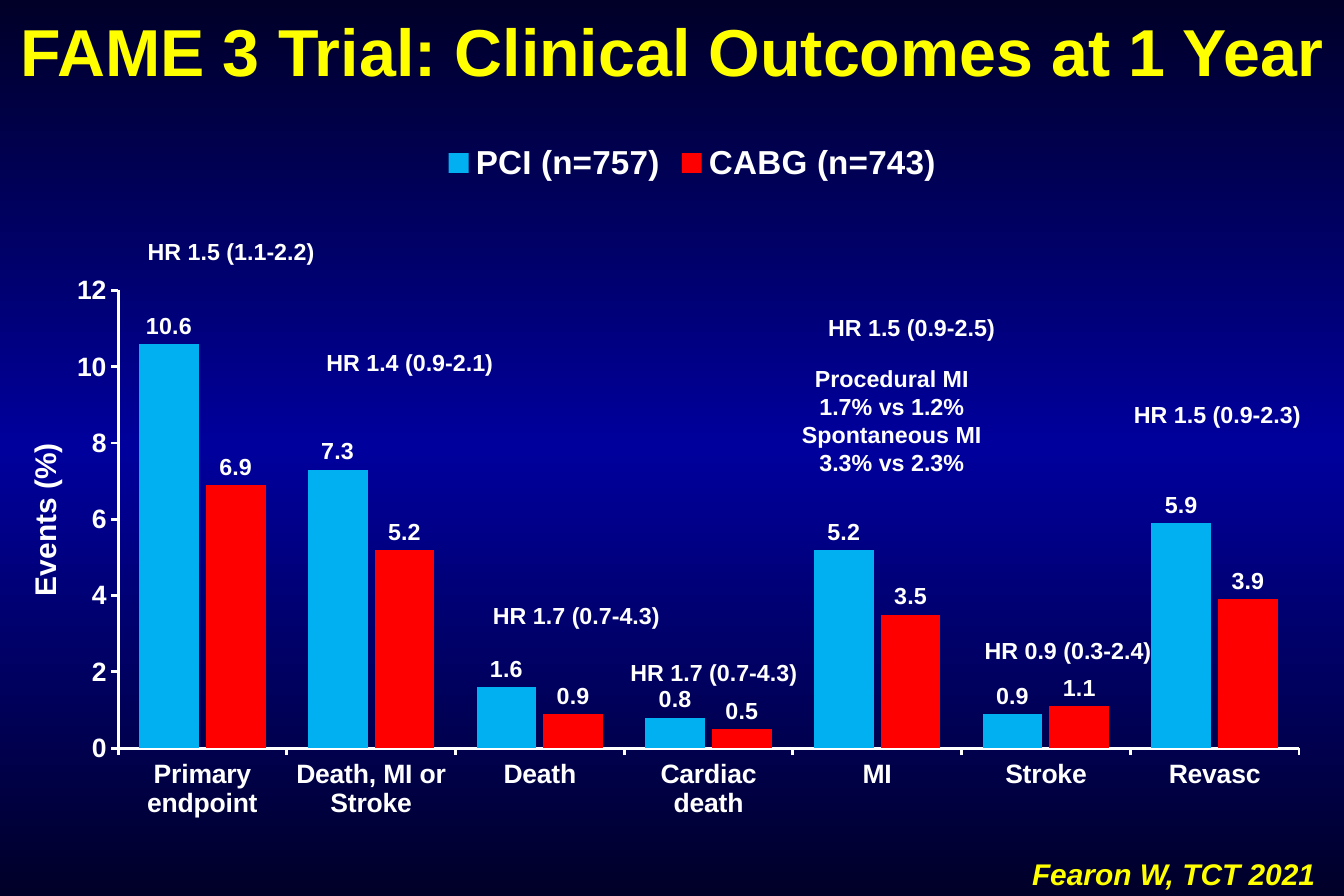
from lxml import etree
from copy import deepcopy
from pptx import Presentation
from pptx.chart.data import CategoryChartData
from pptx.dml.color import RGBColor
from pptx.enum.chart import XL_CHART_TYPE as ChartType
from pptx.enum.chart import XL_LABEL_POSITION as LabelPosition
from pptx.enum.chart import XL_LEGEND_POSITION as LegendPosition
from pptx.enum.chart import XL_TICK_MARK as TickMark
from pptx.enum.text import MSO_ANCHOR as Anchor
from pptx.enum.text import PP_ALIGN as Align
from pptx.oxml.ns import qn
from pptx.util import Inches, Pt

WHITE, YELLOW = "FFFFFF", "FFFF00"
BACKGROUND = [(0, "000028"), (0.5, "00009C"), (1, "000028")]

TITLE = "FAME 3 Trial: Clinical Outcomes at 1 Year"
CREDIT = "Fearon W, TCT 2021"
AXIS_TITLE = "Events (%)"
CATEGORIES = ["Primary endpoint", "Death, MI or Stroke", "Death",
              "Cardiac death", "MI", "Stroke", "Revasc"]
SERIES = [
    ("PCI (n=757)", "00B0F0", [10.6, 7.3, 1.6, 0.8, 5.2, 0.9, 5.9]),
    ("CABG (n=743)", "FF0000", [6.9, 5.2, 0.9, 0.5, 3.5, 1.1, 3.9]),
]
# Lines of text, then left, top, width, height
ANNOTATIONS = [
    (["HR 1.5 (1.1-2.2)"], (1.12, 1.94, 1.63, 0.34)),
    (["HR 1.4 (0.9-2.1)"], (2.54, 2.87, 1.78, 0.34)),
    (["HR 1.7 (0.7-4.3)"], (3.94, 4.98, 1.77, 0.34)),
    (["HR 1.7 (0.7-4.3)"], (5.09, 5.46, 1.77, 0.34)),
    (["HR 1.5 (0.9-2.5)"], (6.72, 2.57, 1.82, 0.34)),
    (["Procedural MI", "1.7% vs 1.2%", "Spontaneous MI", "3.3% vs 2.3%"],
     (6.39, 3, 2.15, 1.04)),
    (["HR 0.9 (0.3-2.4)"], (8.08, 5.28, 1.72, 0.34)),
    (["HR 1.5 (0.9-2.3)"], (9.36, 3.3, 1.66, 0.34)),
]
CHART_BOX = (0.57, 1.08, 10.45, 5.85)
PLOT_LAYOUT = {"layoutTarget": "inner", "xMode": "edge", "yMode": "edge",
               "x": 0.04, "y": 0.231, "w": 0.946, "h": 0.655}


def rgb(color):
    return RGBColor.from_string(color)


def set_values(target, values):
    for name, value in values.items():
        setattr(target, name, value)


def format_font(font, size, color=WHITE, italic=False):
    set_values(font, {"name": "Arial", "size": Pt(size), "bold": True, "italic": italic})
    font.color.rgb = rgb(color)


def add_text(slide, lines, box, size, color=WHITE, align=Align.CENTER, italic=False):
    shape = slide.shapes.add_textbox(*map(Inches, box))
    frame = shape.text_frame
    frame.word_wrap = True
    frame.text = "\n".join(lines)
    for paragraph in frame.paragraphs:
        paragraph.alignment = align
        format_font(paragraph.runs[0].font, size, color, italic)
    return shape


def paint_background(slide):
    fill = slide.background.fill
    fill.gradient()
    fill.gradient_angle = 90
    stop_list = slide.element.find(".//" + qn("a:gsLst"))
    stop_list.append(deepcopy(stop_list[-1]))
    for stop, (position, color) in zip(fill.gradient_stops, BACKGROUND):
        stop.position = position
        stop.color.rgb = rgb(color)


def place_plot(chart):
    """Fix the inner plot area as fractions of the chart."""
    plot_area = chart.element.find(".//" + qn("c:plotArea"))
    for layout in plot_area.findall(qn("c:layout")):
        plot_area.remove(layout)
    layout = etree.Element(qn("c:layout"))
    manual = etree.SubElement(layout, qn("c:manualLayout"))
    for name, value in PLOT_LAYOUT.items():
        etree.SubElement(manual, qn("c:" + name)).set("val", str(value))
    plot_area.insert(0, layout)


def add_outcome_chart(slide):
    data = CategoryChartData()
    data.categories = CATEGORIES
    for name, _, values in SERIES:
        data.add_series(name, values)
    chart = slide.shapes.add_chart(
        ChartType.COLUMN_CLUSTERED, *map(Inches, CHART_BOX), data).chart
    set_values(chart, {"has_title": False, "has_legend": True})
    set_values(chart.font, {"name": "Calibri", "size": Pt(10)})
    set_values(chart.legend, {"position": LegendPosition.TOP, "include_in_layout": False})
    format_font(chart.legend.font, 20)

    for axis in (chart.category_axis, chart.value_axis):
        set_values(axis, {"has_major_gridlines": False,
                          "major_tick_mark": TickMark.OUTSIDE,
                          "minor_tick_mark": TickMark.NONE})
        format_font(axis.tick_labels.font, 16)
        axis.format.line.color.rgb = rgb(WHITE)
        axis.format.line.width = Pt(1.75)
    set_values(chart.value_axis, {"minimum_scale": 0, "maximum_scale": 12, "major_unit": 2})

    plot = chart.plots[0]
    set_values(plot, {"gap_width": 71, "overlap": -12, "vary_by_categories": False})
    for series, (_, color, _) in zip(plot.series, SERIES):
        series.format.fill.solid()
        series.format.fill.fore_color.rgb = rgb(color)
        labels = series.data_labels
        set_values(labels, {"show_value": True, "position": LabelPosition.OUTSIDE_END})
        format_font(labels.font, 14)
    place_plot(chart)


def main():
    presentation = Presentation()
    set_values(presentation, {"slide_width": Inches(11.25), "slide_height": Inches(7.5)})
    slide = presentation.slides.add_slide(presentation.slide_layouts[6])
    paint_background(slide)
    add_text(slide, [CREDIT], (8.54, 7.11, 2.71, 0.4), 18, YELLOW, Align.LEFT, True)
    add_text(slide, [TITLE], (0, 0.04, 11.25, 0.77), 40, YELLOW)
    add_outcome_chart(slide)
    axis_title = add_text(slide, [AXIS_TITLE], (0.12, 2.35, 0.5, 4), 18)
    axis_title.text_frame.vertical_anchor = Anchor.MIDDLE
    axis_title.element.find(".//" + qn("a:bodyPr")).set("vert", "vert270")
    for lines, box in ANNOTATIONS:
        add_text(slide, lines, box, 14)
    presentation.save("out.pptx")


if __name__ == "__main__":
    main()
